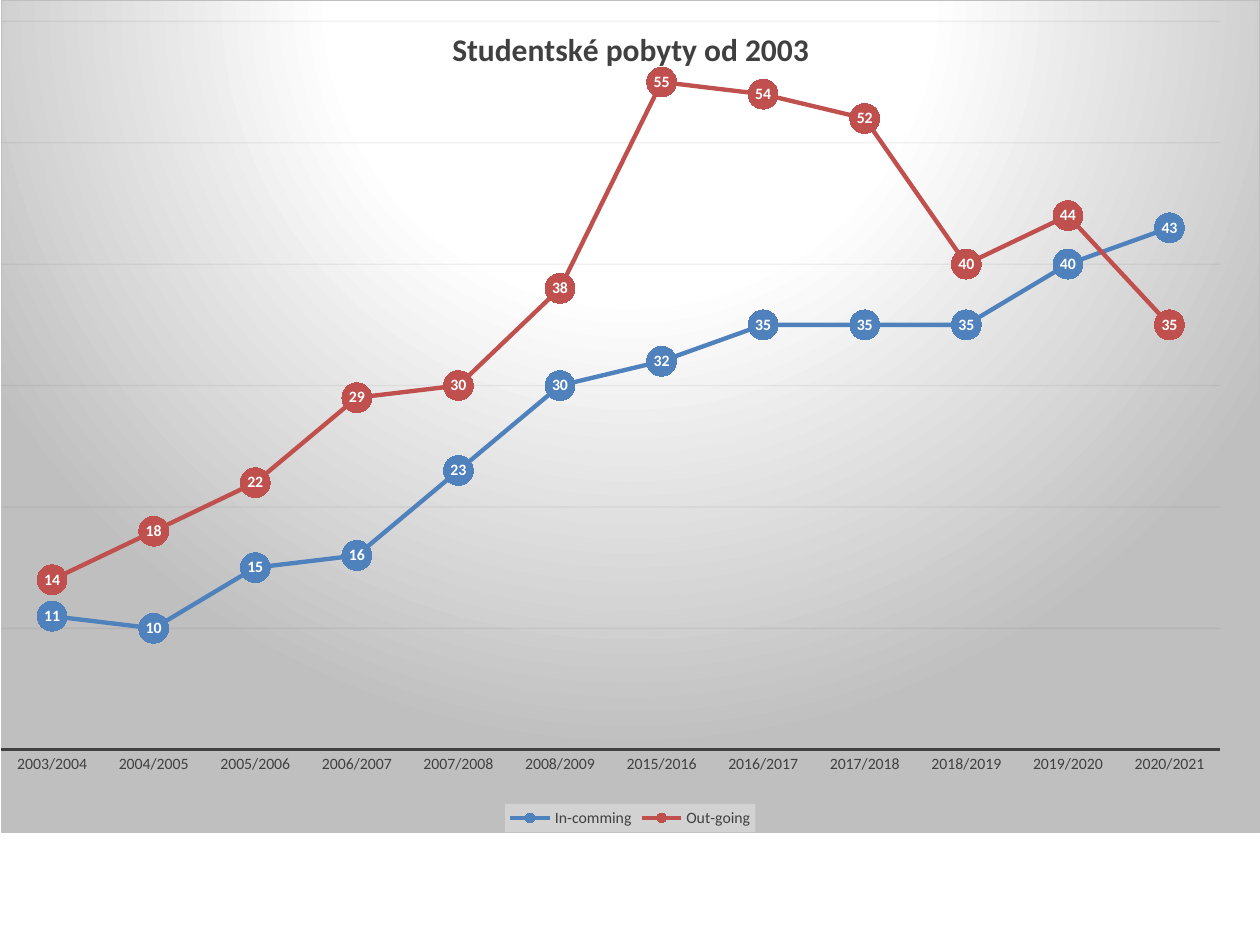
"""Build a slide with a line chart of student stays since 2003."""
from pptx import Presentation
from pptx import util as u
from pptx.chart.data import CategoryChartData
from pptx.dml.color import RGBColor
from pptx.enum import chart as kinds
from pptx.oxml import parse_xml
from pptx.oxml.ns import qn

TITLE = "Studentské pobyty od 2003"
YEARS = [f"{year}/{year + 1}" for year in (*range(2003, 2009), *range(2015, 2021))]
STAYS = {
    "In-comming": (11, 10, 15, 16, 23, 30, 32, 35, 35, 35, 40, 43),
    "Out-going": (14, 18, 22, 29, 30, 38, 55, 54, 52, 40, 44, 35),
}
THEME = {
    "font": "Calibri", "title": 18, "small": 9, "base": 10,
    "text": "404040", "label": "FFFFFF", "grid": "0D0D0D", "border": "BFBFBF",
    "legend": "F2F2F2", "series": ("4F81BD", "C0504D"),
    "grid_alpha": 5, "legend_alpha": 39,
    "gradient": ((0, "FFFFFF"), (39, "FFFFFF"), (100, "BFBFBF")),
}
PLOT_PERCENT = {"x": 0, "y": 2.5, "w": 96.9, "h": 87.6}
TITLE_PERCENT = {"x": 35.4, "y": 2.6}
NAMESPACES = (
    'xmlns:c="http://schemas.openxmlformats.org/drawingml/2006/chart" '
    'xmlns:a="http://schemas.openxmlformats.org/drawingml/2006/main"'
)


def style_font(font, size, color, bold=False):
    font.name, font.size, font.bold = THEME["font"], u.Pt(size), bold
    font.color.rgb = RGBColor.from_string(color)


def style_line(line, color, width):
    line.color.rgb = RGBColor.from_string(color)
    line.width = u.Pt(width)


def solid(fill, color):
    fill.solid()
    fill.fore_color.rgb = RGBColor.from_string(color)


def color_xml(color, alpha=100):
    return f'<a:srgbClr val="{color}"><a:alpha val="{alpha * 1000}"/></a:srgbClr>'


def layout(percents, inner=False):
    target = '<c:layoutTarget val="inner"/>' if inner else ""
    modes = "".join(f'<c:{key}Mode val="edge"/>' for key in "xy")
    values = "".join(f'<c:{key} val="{value / 100:.3f}"/>' for key, value in percents.items())
    return parse_xml(f"<c:layout {NAMESPACES}><c:manualLayout>{target}{modes}{values}"
                     "</c:manualLayout></c:layout>")


def replace_layout(parent, new, previous=None):
    for old in parent.findall(qn("c:layout")):
        parent.remove(old)
    if previous is None:
        parent.insert(0, new)
    else:
        parent.find(qn(previous)).addnext(new)


def background():
    stops = "".join(f'<a:gs pos="{place * 1000}">{color_xml(color)}</a:gs>'
                    for place, color in THEME["gradient"])
    return parse_xml(
        f'<c:spPr {NAMESPACES}><a:gradFill><a:gsLst>{stops}</a:gsLst><a:path path="circle">'
        '<a:fillToRect l="50000" t="-80000" r="50000" b="180000"/></a:path></a:gradFill>'
        f'<a:ln w="9525"><a:solidFill>{color_xml(THEME["border"])}</a:solidFill></a:ln></c:spPr>')


def style_axes(chart):
    years, stays = chart.category_axis, chart.value_axis
    years.major_tick_mark = kinds.XL_TICK_MARK.NONE
    style_font(years.tick_labels.font, THEME["small"], THEME["text"])
    style_line(years.format.line, THEME["text"], 1.5)
    stays.minimum_scale, stays.maximum_scale, stays.major_unit = 0, 60, 10
    stays.visible = False
    style_line(stays.major_gridlines.format.line, THEME["grid"], 0.75)
    grid = chart._chartSpace.find(f".//{qn('c:majorGridlines')}//{qn('a:srgbClr')}")
    grid.append(parse_xml(f'<a:alpha {NAMESPACES} val="{THEME["grid_alpha"] * 1000}"/>'))


def style_series(series, color):
    series.smooth = False
    style_line(series.format.line, color, 2.5)
    marker = series.marker
    marker.style, marker.size = kinds.XL_MARKER_STYLE.CIRCLE, 17
    solid(marker.format.fill, color)
    marker.format.line.fill.background()
    labels = series.data_labels
    labels.show_value, labels.position = True, kinds.XL_LABEL_POSITION.CENTER
    style_font(labels.font, THEME["small"], THEME["label"], True)


def style_title(chart):
    chart.has_title = True
    frame = chart.chart_title.text_frame
    frame.text = TITLE
    style_font(frame.paragraphs[0].runs[0].font, THEME["title"], THEME["text"], True)
    replace_layout(chart.chart_title._element, layout(TITLE_PERCENT), "c:tx")


def style_legend(chart):
    chart.has_legend = True
    legend = chart.legend
    legend.position, legend.include_in_layout = kinds.XL_LEGEND_POSITION.BOTTOM, False
    style_font(legend.font, THEME["small"], THEME["text"])
    fill = color_xml(THEME["legend"], THEME["legend_alpha"])
    legend._element.find(qn("c:txPr")).addprevious(parse_xml(
        f"<c:spPr {NAMESPACES}><a:solidFill>{fill}</a:solidFill></c:spPr>"))


def main():
    deck = Presentation()
    deck.slide_width, deck.slide_height = u.Inches(10), u.Inches(7.5)
    page = deck.slides.add_slide(deck.slide_layouts[6])
    data = CategoryChartData()
    data.categories = YEARS
    for name, values in STAYS.items():
        data.add_series(name, values)
    chart = page.shapes.add_chart(kinds.XL_CHART_TYPE.LINE_MARKERS, 0, 0,
                                  u.Inches(10), u.Inches(6.61), data).chart
    style_font(chart.font, THEME["base"], "000000")
    style_title(chart)
    style_legend(chart)
    style_axes(chart)
    chart.plots[0].vary_by_categories = False
    for series, color in zip(chart.plots[0].series, THEME["series"]):
        style_series(series, color)
    root = chart._chartSpace
    replace_layout(root.find(f".//{qn('c:plotArea')}"), layout(PLOT_PERCENT, True))
    root.find(qn("c:chart")).addnext(background())
    deck.save("out.pptx")


if __name__ == "__main__":
    main()
